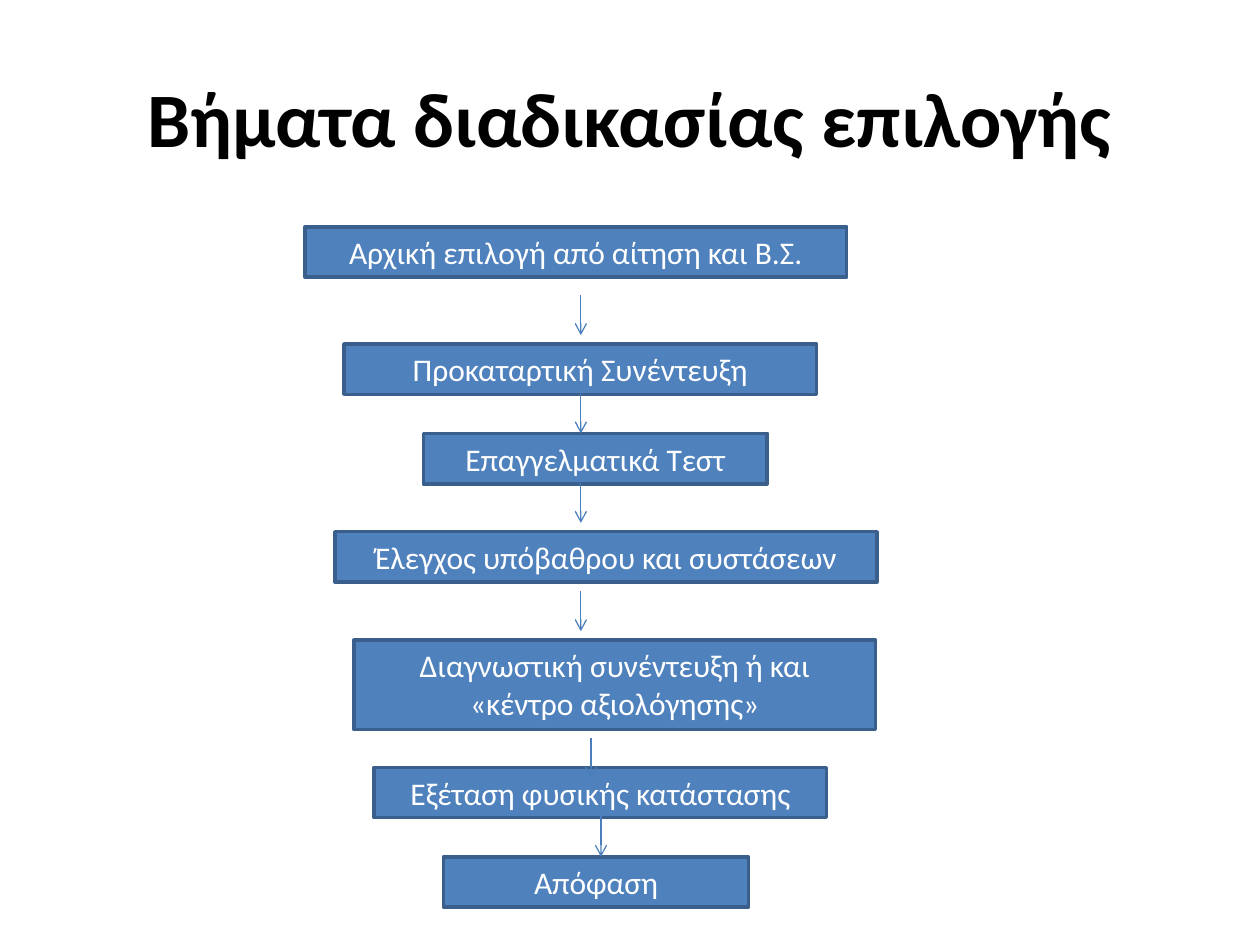
from lxml.etree import SubElement
from pptx import Presentation
from pptx.dml.color import RGBColor
from pptx.enum.shapes import MSO_CONNECTOR, MSO_SHAPE
from pptx.enum.text import MSO_ANCHOR, MSO_AUTO_SIZE, PP_ALIGN
from pptx.oxml.ns import qn
from pptx.util import Inches, Pt

STEPS = [
    ("Αρχική επιλογή από αίτηση και Β.Σ.", 2.42, 1.8, 4.3, 0.4),
    ("Προκαταρτική Συνέντευξη", 2.73, 2.73, 3.75, 0.4),
    ("Επαγγελματικά Τεστ", 3.36, 3.44, 2.73, 0.4),
    ("Έλεγχος υπόβαθρου και συστάσεων", 2.66, 4.22, 4.3, 0.4),
    ("Διαγνωστική συνέντευξη ή και «κέντρο αξιολόγησης»", 2.81, 5.08, 4.14, 0.71),
    ("Εξέταση φυσικής κατάστασης", 2.97, 6.09, 3.59, 0.4),
    ("Απόφαση", 3.52, 6.8, 2.42, 0.4),
]
ARROWS = [(4.61, 2.34), (4.61, 3.12), (4.61, 3.83), (4.61, 4.69), (4.69, 5.86), (4.77, 6.48)]
ARROW_LENGTH = 0.32


def rgb(value):
    return RGBColor.from_string(value)


def write(tf, text, size=18, color="FFFFFF", bold=False, anchor=MSO_ANCHOR.TOP):
    tf.word_wrap = True
    tf.vertical_anchor = anchor
    p = tf.paragraphs[0]
    p.alignment = PP_ALIGN.CENTER
    r = p.add_run()
    r.text = text
    r.font.name = "Calibri"
    r.font.size = Pt(size)
    r.font.bold = bold
    r.font.color.rgb = rgb(color)


class FlowSlide:
    """Holds the flow chart style and the slide being drawn."""

    fill = "4F81BD"
    border = "3A5F8C"
    arrow_color = "4B7EBC"

    def __init__(self, prs):
        self.s = prs.slides.add_slide(prs.slide_layouts[6])

    def title(self, text):
        sp = self.s.shapes.add_textbox(Inches(0.5), Inches(0.3), Inches(9), Inches(1.25))
        write(sp.text_frame, text, size=44, color="000000", bold=True, anchor=MSO_ANCHOR.MIDDLE)

    def step(self, text, *box):
        sp = self.s.shapes.add_shape(MSO_SHAPE.RECTANGLE, *map(Inches, box))
        sp.shadow.inherit = False
        sp.fill.solid()
        sp.fill.fore_color.rgb = rgb(self.fill)
        sp.line.color.rgb = rgb(self.border)
        sp.line.width = Pt(2)
        write(sp.text_frame, text)
        sp.text_frame.auto_size = MSO_AUTO_SIZE.SHAPE_TO_FIT_TEXT

    def arrow(self, x, y):
        sp = self.s.shapes.add_connector(
            MSO_CONNECTOR.STRAIGHT, Inches(x), Inches(y), Inches(x), Inches(y + ARROW_LENGTH))
        sp.line.color.rgb = rgb(self.arrow_color)
        sp.line.width = Pt(0.75)
        SubElement(sp.line._get_or_add_ln(), qn("a:tailEnd"), type="arrow")
        SubElement(sp._element.spPr, qn("a:effectLst"))


def main():
    prs = Presentation()
    prs.slide_width, prs.slide_height = Inches(10), Inches(7.5)
    slide = FlowSlide(prs)
    slide.title("Βήματα διαδικασίας επιλογής")
    for step in STEPS:
        slide.step(*step)
    for arrow in ARROWS:
        slide.arrow(*arrow)
    prs.save("out.pptx")


if __name__ == "__main__":
    main()
